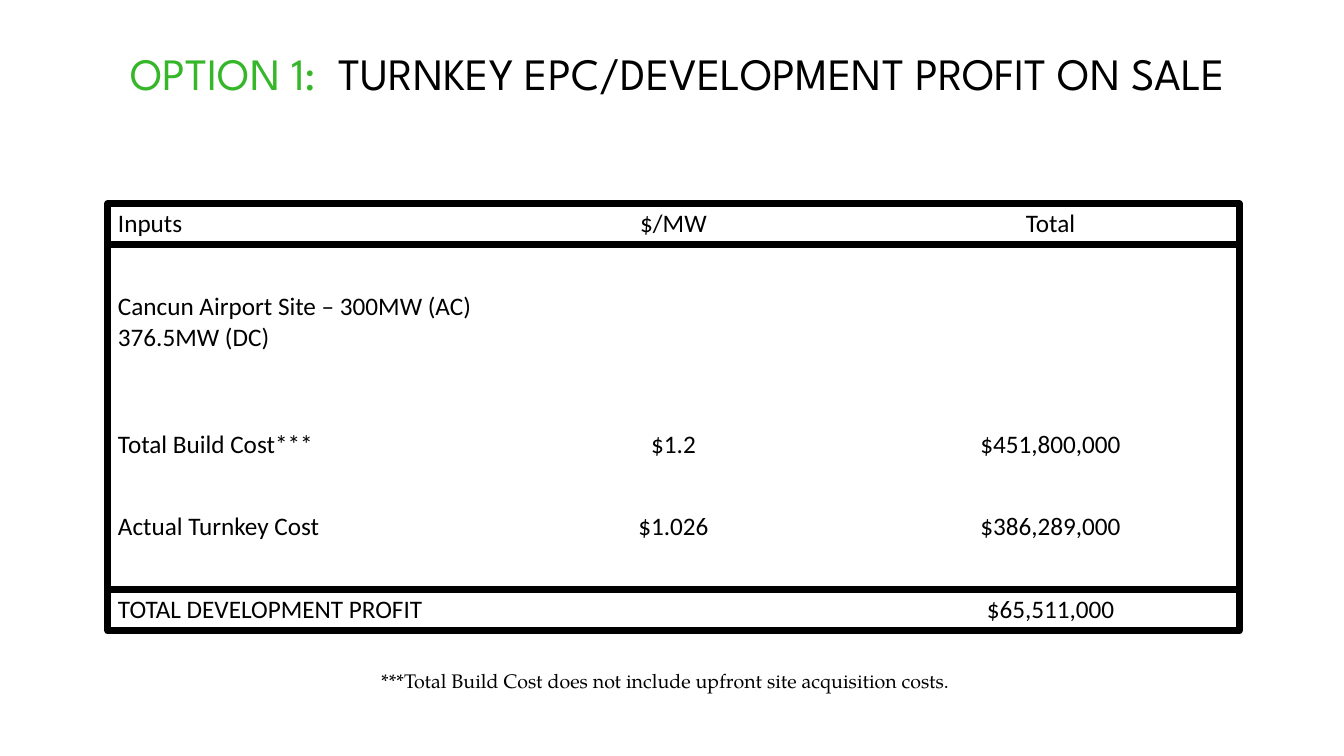
from dataclasses import dataclass

from lxml import etree
from pptx import Presentation
from pptx.dml.color import RGBColor
from pptx.enum import shapes, text
from pptx.oxml import ns
from pptx.util import Inches, Pt


@dataclass(frozen=True)
class Theme:
    black: RGBColor = RGBColor(0x00, 0x00, 0x00)
    green: RGBColor = RGBColor(0x35, 0xB7, 0x29)
    title_size: Pt = Pt(32)
    table_size: Pt = Pt(18)
    note_size: Pt = Pt(14)
    rule_width: Pt = Pt(5)


theme = Theme()


def style_paragraph(para, font_name, size, centred=True):
    para.alignment = text.PP_ALIGN.CENTER if centred else text.PP_ALIGN.LEFT
    para.font.name = font_name
    para.font.size = size
    para.font.color.rgb = theme.black


def add_centred_text(left, top, width, height, spans, font_name, size):
    """Add a one-line text box from (wording, colour) spans."""
    box = page.shapes.add_textbox(Inches(left), Inches(top), Inches(width), Inches(height))
    box.text_frame.word_wrap = True
    para = box.text_frame.paragraphs[0]
    style_paragraph(para, font_name, size)
    for wording, colour in spans:
        span = para.add_run()
        span.text = wording
        span.font.color.rgb = colour


deck = Presentation()
deck.slide_width, deck.slide_height = Inches(13.33), Inches(7.5)
page = deck.slides.add_slide(deck.slide_layouts[6])

add_centred_text(
    0.61, 0.4, 12.24, 1.18,
    [("OPTION 1:  ", theme.green), ("TURNKEY EPC/DEVELOPMENT PROFIT ON SALE", theme.black)],
    "League Spartan", theme.title_size,
)

# Cost table: blank rows separate the entries
blank = ("", "", "")
rows = [
    ("Inputs", "$/MW", "Total"),
    blank,
    ("Cancun Airport Site – 300MW (AC) 376.5MW (DC)", "", ""),
    blank,
    ("Total Build Cost***", "$1.2", "$451,800,000"),
    blank,
    ("Actual Turnkey Cost", "$1.026", "$386,289,000"),
    blank,
    ("TOTAL DEVELOPMENT PROFIT", "", "$65,511,000"),
]
left, top, width, height = 1.07, 2.02, 11.22, 4.24
row_height, site_row, site_height = 0.41, 2, 0.96
frame = (Inches(left), Inches(top), Inches(width), Inches(height))

table = page.shapes.add_table(len(rows), 3, *frame).table
table.first_row = table.horz_banding = False
for row_index, entries in enumerate(rows):
    table.rows[row_index].height = Inches(site_height if row_index == site_row else row_height)
    for column, wording in enumerate(entries):
        cell = table.cell(row_index, column)
        cell.fill.background()
        cell.text = wording
        style_paragraph(cell.text_frame.paragraphs[0], "Calibri", theme.table_size, column > 0)

add_centred_text(
    1.77, 6.59, 9.66, 0.34,
    [("***Total Build Cost does not include upfront site acquisition costs.", theme.black)],
    "TeX Gyre Pagella", theme.note_size,
)

# Heavy border, with rules below the header and above the total
border = page.shapes.add_shape(shapes.MSO_SHAPE.RECTANGLE, *frame)
border.shadow.inherit = False
border.fill.background()
border.line.color.rgb = theme.black
border.line.width = theme.rule_width

for y in (top + row_height, top + height - row_height):
    rule = page.shapes.add_connector(
        shapes.MSO_CONNECTOR.STRAIGHT,
        Inches(left), Inches(y), Inches(left + width), Inches(y),
    )
    rule.line.color.rgb = theme.black
    rule.line.width = theme.rule_width
    etree.SubElement(rule.element.spPr, ns.qn("a:effectLst"))

deck.save("out.pptx")
